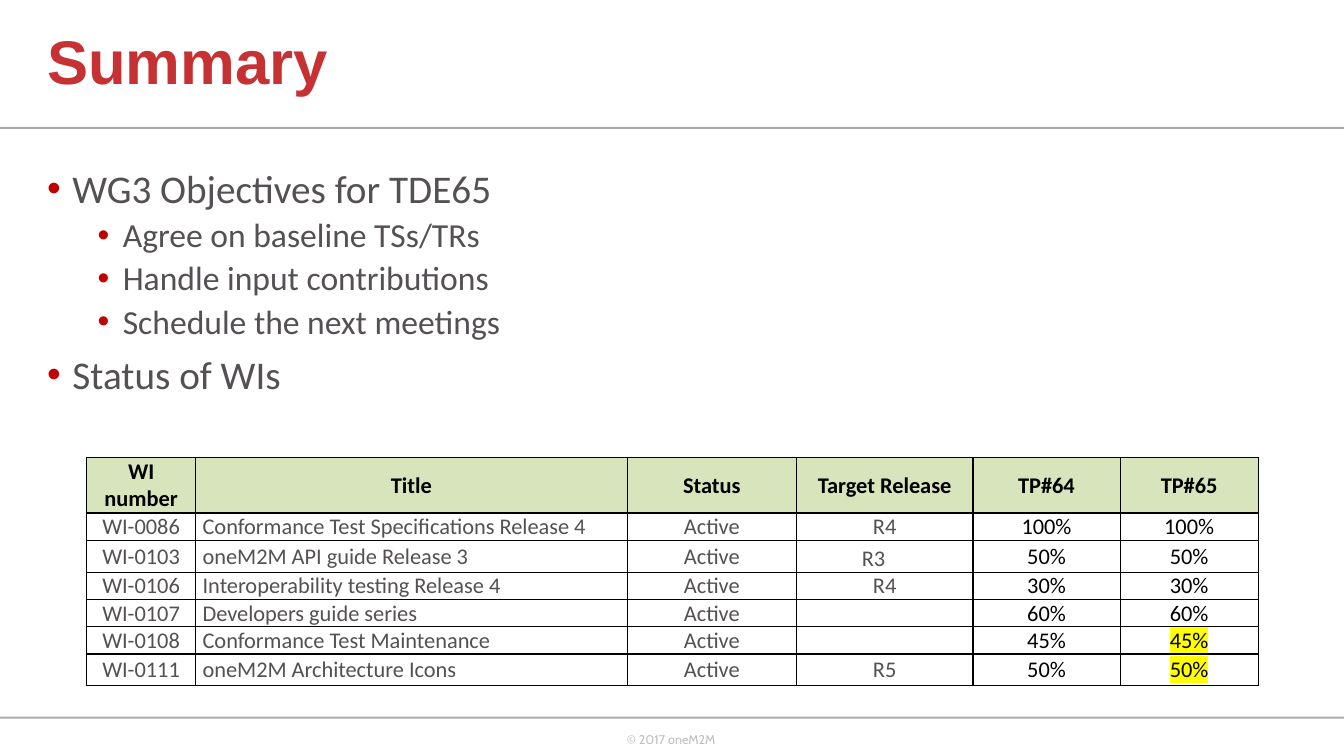
from lxml import etree
from pptx import Presentation
from pptx import util as u
from pptx.dml.color import RGBColor
from pptx.enum import shapes, text
from pptx.oxml.ns import qn

RED = RGBColor(0xC6, 0x31, 0x33)
BULLET_RED = RGBColor(0xC0, 0x00, 0x00)
RULE_GREY = RGBColor(0xA7, 0xA9, 0xAC)
FOOTER_GREY = RGBColor(0xBF, 0xBF, 0xBF)
TEXT_GREY = RGBColor(0x54, 0x50, 0x54)
BLACK = RGBColor(0, 0, 0)
WHITE = RGBColor(0xFF, 0xFF, 0xFF)
HEADER_GREEN = RGBColor(0xD8, 0xE4, 0xBC)
YELLOW = RGBColor(0xFF, 0xFF, 0)

TITLE_FORMAT = {"size": u.Pt(44), "name": "Arial", "bold": True}
FOOTER_FORMAT = {"size": u.Pt(9), "name": "Cabin"}
CELL_FORMAT = {"size": u.Pt(16), "name": "Calibri", "bold": False}
HEADER_FORMAT = {**CELL_FORMAT, "bold": True}
# Per outline level: text size, space before, indent of the text
LEVELS = [(28, 10, 0.25), (24, 5, 0.75)]

OBJECTIVES = [
    (0, "WG3 Objectives for TDE65"),
    (1, "Agree on baseline TSs/TRs"),
    (1, "Handle input contributions"),
    (1, "Schedule the next meetings"),
    (0, "Status of WIs"),
]

COLUMN_WIDTHS = [1.08, 4.28, 1.68, 1.75, 1.46, 1.37]
ROW_HEIGHTS = [0.55, 0.27, 0.32, 0.27, 0.27, 0.27, 0.31]
WORK_ITEMS = [
    ("WI number", "Title", "Status", "Target Release", "TP#64", "TP#65"),
    ("WI-0086", "Conformance Test Specifications Release 4", "Active", "R4", "100%", "100%"),
    ("WI-0103", "oneM2M API guide Release 3", "Active", "R3　", "50%", "50%"),
    ("WI-0106", "Interoperability testing Release 4", "Active", "R4", "30%", "30%"),
    ("WI-0107", "Developers guide series", "Active", "", "60%", "60%"),
    ("WI-0108", "Conformance Test Maintenance", "Active", "", "45%", "45%"),
    ("WI-0111", "oneM2M Architecture Icons", "Active", "R5", "50%", "50%"),
]
HIGHLIGHTED = {(5, 5), (6, 5)}


def apply(target, values):
    for name, value in values.items():
        setattr(target, name, value)


def add_color(parent, tag, color):
    element = etree.SubElement(parent, qn(tag))
    etree.SubElement(element, qn("a:srgbClr"), val=str(color))
    return element


def add_run(paragraph, words, values, color):
    run = paragraph.add_run()
    run.text = words
    apply(run.font, values)
    run.font.color.rgb = color
    return run


def add_rule(slide, top):
    rule = slide.shapes.add_shape(shapes.MSO_SHAPE.RECTANGLE, 0, u.Inches(top),
                                  u.Inches(13.33), u.Inches(0.02))
    rule.shadow.inherit = False
    rule.fill.solid()
    rule.fill.fore_color.rgb = RULE_GREY
    rule.line.fill.background()


def add_text_box(slide, left, top, width, height, **frame_values):
    box = slide.shapes.add_textbox(*map(u.Inches, (left, top, width, height)))
    apply(box.text_frame, {"word_wrap": True, **frame_values})
    return box.text_frame


def add_bullets(frame, items):
    for index, (level, words) in enumerate(items):
        size, space_before, indent = LEVELS[level]
        paragraph = frame.add_paragraph() if index else frame.paragraphs[0]
        apply(paragraph, {"level": level, "line_spacing": 0.9})
        if index:
            paragraph.space_before = u.Pt(space_before)
        properties = paragraph._p.get_or_add_pPr()
        properties.set("marL", str(u.Inches(indent)))
        properties.set("indent", str(u.Inches(-0.25)))
        add_color(properties, "a:buClr", BULLET_RED)
        etree.SubElement(properties, qn("a:buFont"), typeface="Arial")
        etree.SubElement(properties, qn("a:buChar"), char="•")
        add_run(paragraph, words, {"size": u.Pt(size), "name": "Calibri"}, TEXT_GREY)


def add_borders(cell):
    properties = cell._tc.get_or_add_tcPr()
    for side in "LRTB":
        line = etree.SubElement(properties, qn(f"a:ln{side}"), w=str(u.Pt(1)))
        add_color(line, "a:solidFill", BLACK)


def fill_cell(cell, words, row, column):
    header = row == 0
    add_borders(cell)
    cell.fill.solid()
    cell.fill.fore_color.rgb = HEADER_GREEN if header else WHITE
    apply(cell, {"margin_left": u.Inches(0.07), "margin_right": u.Inches(0.07),
                 "margin_top": 0, "margin_bottom": 0,
                 "vertical_anchor": text.MSO_ANCHOR.MIDDLE})
    paragraph = cell.text_frame.paragraphs[0]
    left_aligned = column == 1 and not header
    paragraph.alignment = text.PP_ALIGN.LEFT if left_aligned else text.PP_ALIGN.CENTER
    if not words:
        # Keeps an empty cell as low as its row
        etree.SubElement(paragraph._p, qn("a:endParaRPr"), sz="1600")
        return
    color = BLACK if header or column >= 4 else TEXT_GREY
    run = add_run(paragraph, words, HEADER_FORMAT if header else CELL_FORMAT, color)
    if (row, column) in HIGHLIGHTED:
        properties = run._r.get_or_add_rPr()
        highlight = add_color(properties, "a:highlight", YELLOW)
        properties.find(qn("a:solidFill")).addnext(highlight)


def add_status_table(slide, left, top):
    frame = slide.shapes.add_table(len(ROW_HEIGHTS), len(COLUMN_WIDTHS),
                                   u.Inches(left), u.Inches(top),
                                   u.Inches(sum(COLUMN_WIDTHS)), u.Inches(sum(ROW_HEIGHTS)))
    table = frame.table
    apply(table, {"first_row": False, "horz_banding": False})
    for column, width in zip(table.columns, COLUMN_WIDTHS):
        column.width = u.Inches(width)
    for row, height in zip(table.rows, ROW_HEIGHTS):
        row.height = u.Inches(height)
    for row, values in enumerate(WORK_ITEMS):
        for column, words in enumerate(values):
            fill_cell(table.cell(row, column), words, row, column)


def main():
    presentation = Presentation()
    apply(presentation, {"slide_width": u.Inches(13.33), "slide_height": u.Inches(7.5)})
    slide = presentation.slides.add_slide(presentation.slide_layouts[6])

    # Rules and footer
    for top in (1.26, 7.11):
        add_rule(slide, top)
    footer = add_text_box(slide, 6.12, 7.21, 1.1, 0.4, word_wrap=False)
    add_run(footer.paragraphs[0], "© 2017 oneM2M", FOOTER_FORMAT, FOOTER_GREY)

    # Title
    title = add_text_box(slide, 0.37, 0, 11.28, 1.28,
                         vertical_anchor=text.MSO_ANCHOR.MIDDLE)
    title.paragraphs[0].line_spacing = 0.9
    add_run(title.paragraphs[0], "Summary", TITLE_FORMAT, RED)

    # Objectives and work item status
    add_bullets(add_text_box(slide, 0.37, 1.63, 11.5, 2.58), OBJECTIVES)
    add_status_table(slide, 0.86, 4.54)

    presentation.save("out.pptx")


if __name__ == "__main__":
    main()
